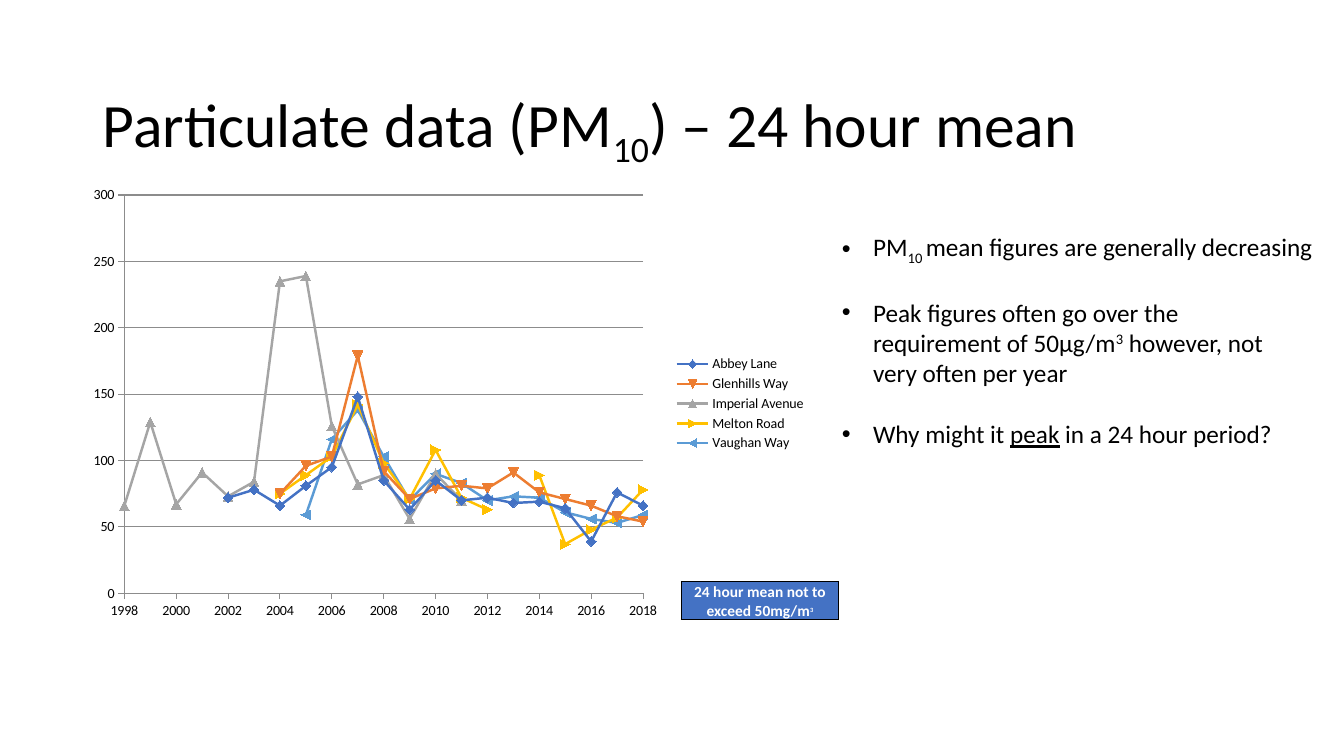
from lxml import etree
from pptx import Presentation
from pptx import util as u
from pptx.chart.data import XyChartData
from pptx.dml.color import RGBColor
from pptx.enum import chart as ch, text
from pptx.oxml import parse_xml
from pptx.oxml.ns import nsdecls, qn

WIDE, HIGH = 13.33, 7.5
FONT = "Calibri"
HUES = {"ink": "000000", "paper": "FFFFFF", "grid": "8C8C8C", "blue": "4472C4",
        "orange": "ED7D31", "grey": "A5A5A5", "gold": "FFC000", "sky": "5B9BD5"}
YEARS = range(1998, 2019)
SITES = [
    ("Abbey Lane", "blue", 2002,
     [72, 78, 66, 81, 95, 148, 85, 63, 85, 70, 72, 68, 69, 64, 39, 76, 66]),
    ("Glenhills Way", "orange", 2004,
     [75, 96, 103, 179, 92, 71, 79, 81, 79, 91, 76, 71, 66, 58, 54]),
    ("Imperial Avenue", "grey", 1998,
     [66, 129, 67, 91, 73, 84, 235, 239, 126, 82, 89, 56, 90, 70]),
    ("Melton Road", "gold", 2004,
     [75, 89, 103, 142, 98, 71, 108, 72, 63, None, 89, 37, 48, 57, 78]),
    ("Vaughan Way", "sky", 2005,
     [59, 116, 138, 103, 70, 90, 83, 70, 73, 72, 61, 56, 53, 59]),
]
POINTS = [
    [("PM", {}), ("10 ", {"base": -25}), ("mean figures are generally decreasing", {})],
    [("Peak figures often go over the requirement of 50µg/m", {}), ("3", {"base": 30}),
     (" however, not very often per year", {})],
    [("Why might it ", {}), ("peak", {"line": True}), (" in a 24 hour period?", {})],
]


def hue(name):
    return RGBColor.from_string(HUES[name])


def area(x, y, w, h):
    return [u.Inches(n) for n in (x * WIDE, y * HIGH, w * WIDE, h * HIGH)]


def write(para, words, size=18, color="ink", bold=None, line=None, base=0):
    run = para.add_run()
    run.text = words
    font = run.font
    font.name, font.size, font.bold, font.underline = FONT, u.Pt(size), bold, line
    font.color.rgb = hue(color)
    if base:
        font._element.set("baseline", str(base * 1000))


def box(slide, spot):
    frame = slide.shapes.add_textbox(*spot).text_frame
    frame.word_wrap = True
    return frame


def title(slide):
    para = box(slide, area(0.069, 0.108, 0.863, 0.193)).paragraphs[0]
    para.line_spacing = 0.9
    write(para, "Particulate data (PM", size=44)
    write(para, "10", size=44, base=-25)
    write(para, ") – 24 hour mean", size=44)


def bullets(slide):
    frame = box(slide, area(0.619, 0.3, 0.365, 0.336))
    for i, parts in enumerate(POINTS):
        para = frame.add_paragraph() if i else frame.paragraphs[0]
        props = para._p.get_or_add_pPr()
        props.set("marL", str(u.Inches(0.31)))
        props.set("indent", str(-u.Inches(0.31)))
        if i:
            para.space_before = u.Pt(22)
        etree.SubElement(props, qn("a:buFont"), typeface="Arial")
        etree.SubElement(props, qn("a:buChar"), char="•")
        for words, form in parts:
            write(para, words, **form)


def stroke(line, color, width):
    line.color.rgb = hue(color)
    line.width = u.Pt(width)


def axis(part, low, high, step):
    part.minimum_scale, part.maximum_scale, part.major_unit = low, high, step
    part.major_tick_mark = ch.XL_TICK_MARK.OUTSIDE
    part.minor_tick_mark = ch.XL_TICK_MARK.NONE
    part.tick_labels.number_format = "0"
    part.tick_labels.number_format_is_linked = False
    stroke(part.format.line, "grid", 0.75)


def place(plot, x, y, w, h):
    for old in plot.findall(qn("c:layout")):
        plot.remove(old)
    plot.insert(0, parse_xml(
        f'<c:layout {nsdecls("c")}><c:manualLayout><c:layoutTarget val="inner"/>'
        f'<c:xMode val="edge"/><c:yMode val="edge"/><c:x val="{x}"/><c:y val="{y}"/>'
        f'<c:w val="{w}"/><c:h val="{h}"/></c:manualLayout></c:layout>'))


def graph(slide):
    data = XyChartData()
    for name, _, start, vals in SITES:
        row = data.add_series(name)
        known = dict(enumerate(vals, start))
        for year in YEARS:
            row.add_data_point(year, known.get(year))
    chart = slide.shapes.add_chart(ch.XL_CHART_TYPE.XY_SCATTER_LINES,
                                   *area(0.0585, 0.236, 0.549, 0.596), data).chart
    chart.font.name, chart.font.size = FONT, u.Pt(10)
    chart.font.color.rgb = hue("ink")
    chart.has_title = False
    chart.has_legend = True
    chart.legend.position = ch.XL_LEGEND_POSITION.RIGHT
    chart.legend.include_in_layout = False
    axis(chart.category_axis, 1998, 2018, 2)
    axis(chart.value_axis, 0, 300, 50)
    chart.category_axis.has_major_gridlines = False
    chart.value_axis.has_major_gridlines = True
    stroke(chart.value_axis.major_gridlines.format.line, "grid", 0.75)
    plot = chart.plots[0]
    plot.vary_by_categories = False
    for i, (row, site) in enumerate(zip(plot.series, SITES), 1):
        row.smooth = False
        stroke(row.format.line, site[1], 1.75)
        row.marker.size = 7
        fill = row.marker.format.fill
        fill.solid()
        fill.fore_color.rgb = hue(site[1])
        row._element.find(qn("c:idx")).set("val", str(i))
        for pt in list(row._element.iter(qn("c:pt"))):
            if pt.findtext(qn("c:v")) == "None":
                pt.getparent().remove(pt)
    place(chart._chartSpace.chart.plotArea, 0.062, 0.037, 0.703, 0.884)


def limit(slide):
    table = slide.shapes.add_table(1, 1, *area(0.507, 0.769, 0.117, 0.051)).table
    table.first_row = table.horz_banding = False
    cell = table.cell(0, 0)
    cell.margin_left = cell.margin_right = cell.margin_top = u.Inches(0.01)
    cell.margin_bottom = 0
    cell.vertical_anchor = text.MSO_ANCHOR.BOTTOM
    props = cell._tc.get_or_add_tcPr()
    for side in "LRTB":
        props.append(parse_xml(
            f'<a:ln{side} {nsdecls("a")} w="12700"><a:solidFill>'
            f'<a:srgbClr val="{HUES["ink"]}"/></a:solidFill></a:ln{side}>'))
    cell.fill.solid()
    cell.fill.fore_color.rgb = hue("blue")
    para = cell.text_frame.paragraphs[0]
    para.alignment = text.PP_ALIGN.CENTER
    write(para, "24 hour mean not to exceed 50mg/m", size=11, color="paper", bold=True)
    write(para, "3", size=8, color="paper", bold=True, base=30)


def main():
    deck = Presentation()
    deck.slide_width, deck.slide_height = u.Inches(WIDE), u.Inches(HIGH)
    slide = deck.slides.add_slide(deck.slide_layouts[6])
    for make in (title, graph, bullets, limit):
        make(slide)
    deck.save("out.pptx")


if __name__ == "__main__":
    main()
